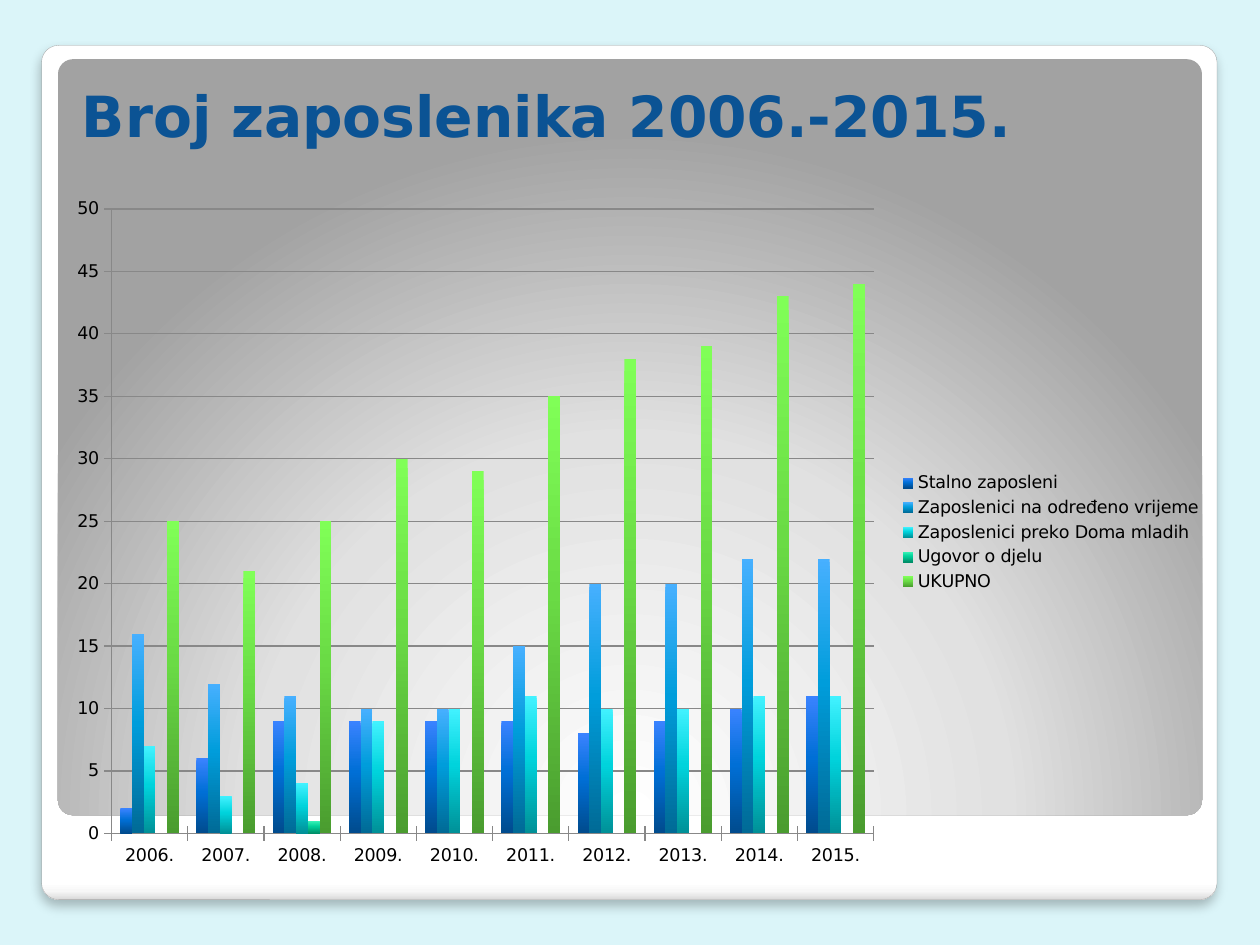
from lxml import etree
from pptx import Presentation
from pptx.chart.data import CategoryChartData
from pptx.dml.color import RGBColor
from pptx.enum.chart import XL_CHART_TYPE, XL_LEGEND_POSITION, XL_TICK_MARK
from pptx.enum.shapes import MSO_SHAPE
from pptx.enum.text import MSO_ANCHOR, MSO_AUTO_SIZE, PP_ALIGN
from pptx.oxml.ns import qn
from pptx.util import Inches, Pt

COLUMNS = XL_CHART_TYPE.COLUMN_CLUSTERED
LEGEND_RIGHT = XL_LEGEND_POSITION.RIGHT
TICK_CROSS = XL_TICK_MARK.CROSS
ROUND_RECT = MSO_SHAPE.ROUNDED_RECTANGLE
BOTTOM = MSO_ANCHOR.BOTTOM
NO_AUTOFIT = MSO_AUTO_SIZE.NONE
LEFT = PP_ALIGN.LEFT

BACKGROUND = RGBColor(0xDB, 0xF5, 0xF9)
WHITE = RGBColor(0xFF, 0xFF, 0xFF)
OFF_WHITE = RGBColor(0xF7, 0xF7, 0xF7)
EDGE_GRAY = RGBColor(0xDA, 0xDA, 0xDA)
LIGHT_GRAY = RGBColor(0xE1, 0xE1, 0xE1)
PANEL_GRAY = RGBColor(0xA2, 0xA2, 0xA2)
BORDER_GRAY = RGBColor(0xA4, 0xA4, 0xA4)
GRID_GRAY = RGBColor(0x88, 0x88, 0x88)
BLACK = RGBColor(0, 0, 0)
TITLE_BLUE = RGBColor(0x0B, 0x53, 0x94)

YEARS = [f"{year}." for year in range(2006, 2016)]
SERIES = [
    ("Stalno zaposleni", [2, 6, 9, 9, 9, 9, 8, 9, 10, 11],
     ("3A83FF", "006FD6", "004B8D")),
    ("Zaposlenici na određeno vrijeme", [16, 12, 11, 10, 10, 15, 20, 20, 22, 22],
     ("47B0FF", "009DDB", "006A96")),
    ("Zaposlenici preko Doma mladih", [7, 3, 4, 9, 10, 11, 10, 10, 11, 11],
     ("42F2FF", "00D3DC", "009097")),
    ("Ugovor o djelu", [0, 0, 1, 0, 0, 0, 0, 0, 0, 0],
     ("39F5B8", "00CF98", "008E68")),
    ("UKUPNO", [25, 21, 25, 30, 29, 35, 38, 39, 43, 44],
     ("80FF57", "6ADB45", "4A9C2F")),
]


def add_element(parent, tag, **attrs):
    return etree.SubElement(parent, qn(tag), {k: str(v) for k, v in attrs.items()})


def set_gradient(fill, sp_pr, stops, angle=90, circle=None):
    fill.solid()
    solid = sp_pr.find(qn("a:solidFill"))
    grad = etree.Element(qn("a:gradFill"), rotWithShape="1")
    stop_list = add_element(grad, "a:gsLst")
    for position, color in stops:
        gs = add_element(stop_list, "a:gs", pos=position * 1000)
        add_element(gs, "a:srgbClr", val=color)
    if circle:
        center = add_element(grad, "a:path", path="circle")
        sides = {side: value * 1000 for side, value in zip("ltrb", circle)}
        add_element(center, "a:fillToRect", **sides)
    else:
        add_element(grad, "a:lin", ang=angle * 60000, scaled=0)
    sp_pr.replace(solid, grad)


def write_text(tf, text, size, color, font, bold=False, align=LEFT):
    p = tf.paragraphs[0]
    p.alignment = align
    r = p.add_run()
    r.text = text
    r.font.name = font
    r.font.size = Pt(size)
    r.font.bold = bold
    r.font.color.rgb = color


class SlideBuilder:
    font = "DejaVu Sans"

    def __init__(self, slide):
        self.slide = slide
        slide.background.fill.solid()
        slide.background.fill.fore_color.rgb = BACKGROUND

    def panel(self, box, stops, circle=None, border=None, shadow=False):
        sp = self.slide.shapes.add_shape(ROUND_RECT, *map(Inches, box))
        sp.adjustments[0] = 0.02
        set_gradient(sp.fill, sp._element.spPr, stops, circle=circle)
        if border:
            sp.line.color.rgb = border
            sp.line.width = Pt(0.16)
        else:
            sp.line.fill.background()
        sp.shadow.inherit = False
        if shadow:
            effects = sp._element.spPr.find(qn("a:effectLst"))
            outer = add_element(effects, "a:outerShdw", blurRad=Pt(6), dist=Pt(4),
                                dir=90 * 60000, algn="t", rotWithShape=0)
            color = add_element(outer, "a:srgbClr", val=BLACK)
            add_element(color, "a:alpha", val=25000)

    def title(self, text, box):
        sp = self.slide.shapes.title
        sp.left, sp.top, sp.width, sp.height = map(Inches, box)
        tf = sp.text_frame
        tf.word_wrap = True
        tf.auto_size = NO_AUTOFIT
        tf.vertical_anchor = BOTTOM
        write_text(tf, text, 32.4, TITLE_BLUE, self.font, bold=True)
        self.slide.shapes._spTree.append(sp._element)

    def column_chart(self, box, categories, series):
        data = CategoryChartData()
        data.categories = categories
        for name, values, _ in series:
            data.add_series(name, values)
        frame = self.slide.shapes.add_chart(COLUMNS, *map(Inches, box), data)
        chart = frame.chart
        chart.has_title = False
        chart.font.name = self.font
        chart.font.size = Pt(10)
        chart.font.color.rgb = BLACK
        chart.has_legend = True
        chart.legend.position = LEGEND_RIGHT
        chart.legend.include_in_layout = False
        for axis in (chart.category_axis, chart.value_axis):
            axis.major_tick_mark = TICK_CROSS
            axis.format.line.color.rgb = GRID_GRAY
        values_axis = chart.value_axis
        values_axis.minimum_scale = 0
        values_axis.maximum_scale = 50
        values_axis.major_unit = 5
        values_axis.has_major_gridlines = True
        values_axis.major_gridlines.format.line.color.rgb = GRID_GRAY
        plot = chart.plots[0]
        plot.gap_width = 150
        plot.overlap = 0
        plot.vary_by_categories = False
        for ser, (_, _, colors) in zip(plot.series, series):
            fill = ser.format.fill
            sp_pr = ser._element.get_or_add_spPr()
            set_gradient(fill, sp_pr, zip((0, 45, 100), colors))


def main():
    prs = Presentation()
    prs.slide_width, prs.slide_height = Inches(10), Inches(7.5)
    s = SlideBuilder(prs.slides.add_slide(prs.slide_layouts[5]))
    s.panel((0.33, 0.36, 9.33, 6.78),
            [(0, WHITE), (98, WHITE), (99, OFF_WHITE), (100, EDGE_GRAY)],
            border=BORDER_GRAY, shadow=True)
    s.panel((0.46, 0.47, 9.08, 6),
            [(0, WHITE), (55, LIGHT_GRAY), (100, PANEL_GRAY)],
            circle=(50, 175, 50, -75))
    s.title("Broj zaposlenika 2006.-2015.", (0.55, 0.68, 8.78, 0.55))
    s.column_chart((0.43, 1.47, 9.21, 5.51), YEARS, SERIES)
    prs.save("out.pptx")


if __name__ == "__main__":
    main()
